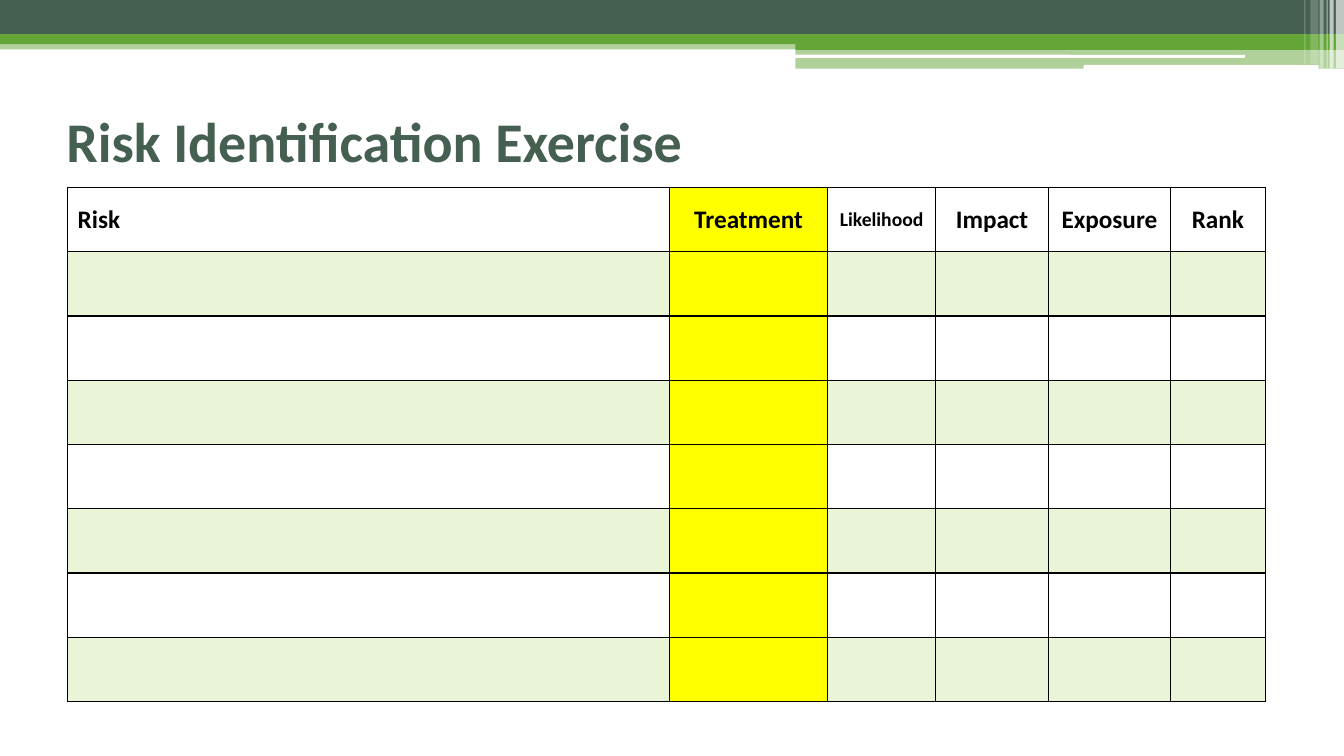
from lxml.etree import SubElement
from pptx import Presentation
from pptx.dml.color import RGBColor
from pptx.enum.shapes import MSO_SHAPE
from pptx.enum.text import MSO_ANCHOR, PP_ALIGN
from pptx.oxml.ns import qn
from pptx.util import Inches, Pt

FONT = "Calibri"
DARK, GREEN, LIME = "455F51", "63A537", "99CB38"
WHITE, BLACK, YELLOW = "FFFFFF", "000000", "FFFF00"


def colour(value):
    return RGBColor.from_string(value)


class SlideBuilder:
    """Places elements by percentages of the slide's width and height."""

    def __init__(self, presentation):
        self.width = presentation.slide_width
        self.height = presentation.slide_height
        self.slide = presentation.slides.add_slide(presentation.slide_layouts[6])

    def across(self, share):
        return round(self.width * share / 100)

    def down(self, share):
        return round(self.height * share / 100)

    def box(self, left, top, width, height):
        return self.across(left), self.down(top), self.across(width), self.down(height)

    def paint(self, fill, properties, value, opacity=100):
        fill.solid()
        fill.fore_color.rgb = colour(value)
        if opacity < 100:
            base = properties.find(qn("a:solidFill"))[0]
            SubElement(base, qn("a:alpha"), val=str(opacity * 1000))

    def bar(self, place, value, opacity=100, kind=MSO_SHAPE.RECTANGLE):
        shape = self.slide.shapes.add_shape(kind, *self.box(*place))
        shape.shadow.inherit = False
        shape.line.fill.background()
        self.paint(shape.fill, shape._element.spPr, value, opacity)

    def add_text(self, paragraph, text, size, value, align=PP_ALIGN.LEFT):
        paragraph.alignment = align
        run = paragraph.add_run()
        run.text = text
        run.font.name = FONT
        run.font.size = Pt(size)
        run.font.bold = True
        run.font.color.rgb = colour(value)

    def title(self, place, text):
        frame = self.slide.shapes.add_textbox(*self.box(*place)).text_frame
        frame.word_wrap = True
        frame.vertical_anchor = MSO_ANCHOR.MIDDLE
        self.add_text(frame.paragraphs[0], text, 40, DARK)

    def borders(self, properties):
        for side in ("lnL", "lnR", "lnT", "lnB"):
            line = SubElement(properties, qn(f"a:{side}"), w=str(Pt(1)))
            fill = SubElement(line, qn("a:solidFill"))
            SubElement(fill, qn("a:srgbClr"), val=BLACK)

    def table(self, left, top, columns, row_count, row_height, highlight):
        width = sum(share for _, share, _ in columns)
        place = self.box(left, top, width, row_count * row_height)
        table = self.slide.shapes.add_table(row_count, len(columns), *place).table
        table.first_row = table.horz_banding = False
        for row in table.rows:
            row.height = self.down(row_height)
        for index, (heading, share, size) in enumerate(columns):
            table.columns[index].width = self.across(share)
            for number in range(row_count):
                cell = table.cell(number, index)
                properties = cell._tc.get_or_add_tcPr()
                self.borders(properties)
                if heading == highlight:
                    self.paint(cell.fill, properties, YELLOW)
                elif number % 2:
                    self.paint(cell.fill, properties, LIME, 20)
                else:
                    cell.fill.background()
            header = table.cell(0, index)
            header.vertical_anchor = MSO_ANCHOR.MIDDLE
            align = PP_ALIGN.CENTER if index else PP_ALIGN.LEFT
            self.add_text(header.text_frame.paragraphs[0], heading, size, BLACK, align)


def main():
    presentation = Presentation()
    presentation.slide_width = Inches(13.33)
    presentation.slide_height = Inches(7.5)
    builder = SlideBuilder(presentation)

    # Header bands
    for place, value, opacity in (
        ((0, 5.33, 100, 1.2), GREEN, 50),
        ((0, 0, 100, 4.53), DARK, 100),
        ((0, 4.53, 100, 1.33), GREEN, 100),
        ((59.18, 5.2, 40.82, 1.4), GREEN, 100),
        ((59.18, 6.6, 40.82, 2.47), GREEN, 50),
    ):
        builder.bar(place, value, opacity)

    # White gaps in the lower band
    for place in ((59.1, 7.25, 33.53, 0.4), (80.63, 8.6, 17.48, 0.5)):
        builder.bar(place, WHITE, kind=MSO_SHAPE.ROUNDED_RECTANGLE)

    # Translucent stripes at the right edge
    for left, width, height, opacity in (
        (99.4, 0.6, 9.07, 65),
        (98.93, 0.3, 9.07, 65),
        (98.7, 0.08, 9.07, 60),
        (98.18, 0.3, 9.07, 40),
        (97.5, 0.6, 8.53, 20),
        (97.05, 0.08, 8.53, 30),
    ):
        builder.bar((left, 0, width, height), WHITE, opacity)

    # Title and risk table
    builder.title((4.2, 10.67, 90, 15.6), "Risk Identification Exercise")
    columns = (
        ("Risk", 44.78, 18),
        ("Treatment", 11.78, 18),
        ("Likelihood", 8.03, 14),
        ("Impact", 8.4, 18),
        ("Exposure", 9.08, 18),
        ("Rank", 7.05, 18),
    )
    builder.table(5.03, 24.8, columns, 8, 8.5, highlight="Treatment")

    presentation.save("out.pptx")


if __name__ == "__main__":
    main()
